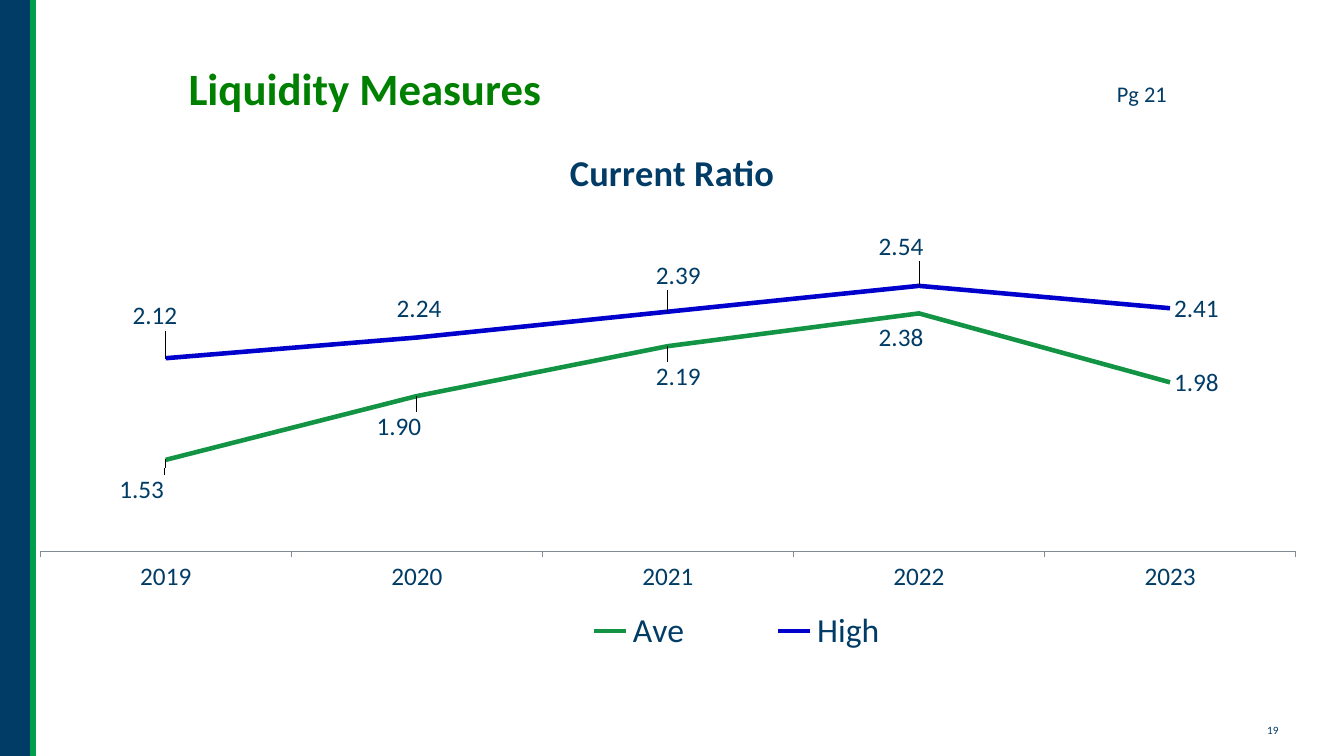
from lxml import etree
from pptx import Presentation
from pptx.chart.data import CategoryChartData
from pptx.dml.color import RGBColor
from pptx.enum.chart import XL_CHART_TYPE, XL_LABEL_POSITION, XL_LEGEND_POSITION, XL_TICK_LABEL_POSITION, XL_TICK_MARK
from pptx.enum.shapes import MSO_CONNECTOR, MSO_SHAPE
from pptx.enum.text import MSO_ANCHOR, PP_ALIGN
from pptx.oxml.ns import qn
from pptx.util import Inches, Pt

LINE_CHART = XL_CHART_TYPE.LINE
LABEL_RIGHT = XL_LABEL_POSITION.RIGHT
LEGEND_BOTTOM = XL_LEGEND_POSITION.BOTTOM
LABELS_LOW = XL_TICK_LABEL_POSITION.LOW
TICK_OUT, TICK_NONE = XL_TICK_MARK.OUTSIDE, XL_TICK_MARK.NONE
STRAIGHT = MSO_CONNECTOR.STRAIGHT
RECTANGLE = MSO_SHAPE.RECTANGLE
MIDDLE = MSO_ANCHOR.MIDDLE
LEFT, RIGHT = PP_ALIGN.LEFT, PP_ALIGN.RIGHT

FONT = "Calibri"
COLORS = {"navy": "003C66", "stripe": "009F4D", "heading": "008000",
          "ave": "139445", "high": "0000CC", "axis": "7F8C96"}

HEADING = "Liquidity Measures"
PAGE_REFERENCE = "Pg 21"
SLIDE_NUMBER = "19"
RATIO_TITLE = "Current Ratio"
YEARS = ["2019", "2020", "2021", "2022", "2023"]
RATIOS = [
    {"name": "Ave", "color": "ave", "values": [1.53, 1.90, 2.19, 2.38, 1.98],
     "label_shifts": [(-0.5, 0.3), (-0.44, 0.3), (-0.16, 0.3), (-0.44, 0.24)]},
    {"name": "High", "color": "high", "values": [2.12, 2.24, 2.39, 2.54, 2.41],
     "label_shifts": [(-0.37, -0.42), (-0.24, -0.29), (-0.16, -0.36), (-0.44, -0.39)]},
]
CHART_LEFT, CHART_TOP, CHART_WIDTH, CHART_HEIGHT = 0.14, 1.12, 12.97, 5.47


def rgb(name):
    return RGBColor.from_string(COLORS[name])


def style_font(font, size, color="navy", bold=False):
    font.name = FONT
    font.size = Pt(size)
    font.bold = bold
    font.color.rgb = rgb(color)


def add_note(slide, text, box, size, wrap):
    frame = slide.shapes.add_textbox(*map(Inches, box)).text_frame
    frame.word_wrap = wrap
    paragraph = frame.paragraphs[0]
    paragraph.text = text
    paragraph.alignment = RIGHT
    style_font(paragraph.font, size)


def manual_layout(**settings):
    layout = etree.Element(qn("c:layout"))
    manual = etree.SubElement(layout, qn("c:manualLayout"))
    for tag, value in settings.items():
        etree.SubElement(manual, qn("c:" + tag)).set("val", str(value))
    return layout


def place(parent, after, **settings):
    for old in parent.findall(qn("c:layout")):
        parent.remove(old)
    position = 0 if after is None else parent.index(parent.find(qn(after))) + 1
    parent.insert(position, manual_layout(**settings))


def add_side_band(slide):
    band = slide.shapes.add_shape(RECTANGLE, 0, 0, Inches(0.33), Inches(7.5))
    band.shadow.inherit = False
    band.fill.solid()
    band.fill.fore_color.rgb = rgb("navy")
    band.line.fill.background()
    stripe = slide.shapes.add_connector(STRAIGHT, Inches(0.33), Inches(-0.08), Inches(0.33), Inches(7.5))
    stripe.line.color.rgb = rgb("stripe")
    stripe.line.width = Pt(4.5)
    etree.SubElement(stripe.element.spPr, qn("a:effectLst"))


def add_ratio_chart(slide):
    data = CategoryChartData(number_format="0.00")
    data.categories = YEARS
    for ratio in RATIOS:
        data.add_series(ratio["name"], ratio["values"])
    box = map(Inches, (CHART_LEFT, CHART_TOP, CHART_WIDTH, CHART_HEIGHT))
    chart = slide.shapes.add_chart(LINE_CHART, *box, data).chart
    style_font(chart.font, 18)

    chart.has_title = True
    title = chart.chart_title.text_frame.paragraphs[0]
    title.text = RATIO_TITLE
    style_font(title.font, 26, bold=True)
    chart.has_legend = True
    chart.legend.position = LEGEND_BOTTOM
    chart.legend.include_in_layout = False
    style_font(chart.legend.font, 24)

    years = chart.category_axis
    years.major_tick_mark = TICK_OUT
    years.tick_label_position = LABELS_LOW
    years.format.line.color.rgb = rgb("axis")
    scale = chart.value_axis
    scale.minimum_scale, scale.maximum_scale, scale.major_unit = 1, 3, 0.5
    scale.has_major_gridlines = False
    scale.major_tick_mark = TICK_NONE
    scale.tick_labels.number_format = "0.00"
    scale.tick_labels.number_format_is_linked = False
    scale.visible = False

    plot = chart.plots[0]
    plot.vary_by_categories = False
    for series, ratio in zip(plot.series, RATIOS):
        series.smooth = False
        series.format.line.color.rgb = rgb(ratio["color"])
        series.format.line.width = Pt(3.25)
        labels = series.data_labels
        labels.show_value = True
        labels.position = LABEL_RIGHT
        labels.number_format = "0.00"
        labels.number_format_is_linked = False
        style_font(labels.font, 18)
        for index, _ in enumerate(ratio["label_shifts"]):
            series.points[index].data_label.position = LABEL_RIGHT

    root = chart.element
    shifts = [shift for ratio in RATIOS for shift in ratio["label_shifts"]]
    for label, (dx, dy) in zip(root.iter(qn("c:dLbl")), shifts):
        place(label, "c:idx", x=round(dx / CHART_WIDTH, 4), y=round(dy / CHART_HEIGHT, 4))
    place(next(root.iter(qn("c:title"))), "c:tx", xMode="edge", yMode="edge", x=0.42, y=0.05)
    place(next(root.iter(qn("c:legend"))), "c:legendPos",
          xMode="edge", yMode="edge", x=0.38, y=0.89, w=0.345, h=0.1)
    place(next(root.iter(qn("c:plotArea"))), None, layoutTarget="inner",
          xMode="edge", yMode="edge", x=0.02, y=0.17, w=0.96, h=0.625)


def main():
    deck = Presentation()
    deck.slide_width, deck.slide_height = Inches(13.33), Inches(7.5)
    slide = deck.slides.add_slide(deck.slide_layouts[5])
    add_side_band(slide)
    add_ratio_chart(slide)

    heading = slide.shapes.title
    heading.left, heading.top, heading.width, heading.height = map(Inches, (1.67, 0.33, 5.42, 1.08))
    frame = heading.text_frame
    frame.text = HEADING
    frame.vertical_anchor = MIDDLE
    frame.margin_left = Inches(0.2)
    frame.paragraphs[0].alignment = LEFT
    style_font(frame.paragraphs[0].font, 32, "heading", bold=True)

    add_note(slide, PAGE_REFERENCE, (10.5, 0.75, 1.17, 0.37), 16, True)
    add_note(slide, SLIDE_NUMBER, (12.44, 7.13, 0.34, 0.24), 8, False)
    deck.save("out.pptx")


if __name__ == "__main__":
    main()
